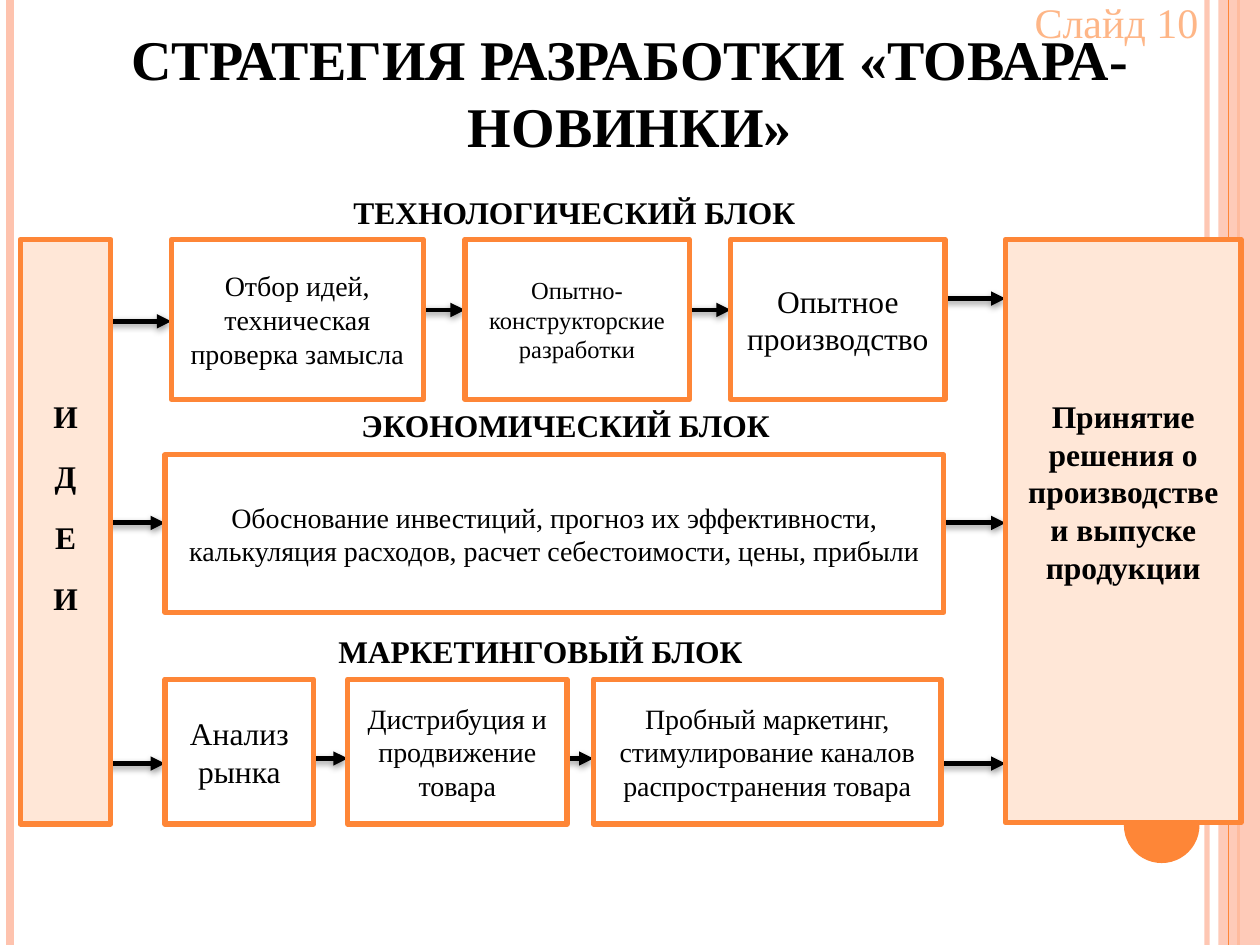
from typing import NamedTuple

from lxml import etree
from pptx import Presentation
from pptx import util as u
from pptx.dml.color import RGBColor
from pptx.enum import shapes, text
from pptx.oxml.ns import qn

FONT = "Times New Roman"
COLORS = {"orange": "FE8637", "pink": "FEC3AE", "cream": "FFE7D7",
          "peach": "FEB687", "white": "FFFFFF", "black": "000000"}


class Label(NamedTuple):
    left: float
    top: float
    width: float
    height: float
    words: str
    size: int = 18
    color: str = "black"
    bold: bool = True
    align: text.PP_ALIGN = text.PP_ALIGN.CENTER
    anchor: text.MSO_ANCHOR = text.MSO_ANCHOR.TOP


class Step(NamedTuple):
    left: float
    width: float
    words: str
    size: int


class Row(NamedTuple):
    top: float
    height: float
    steps: list[Step]


class Rail(NamedTuple):
    x: float
    color: str
    weight: float
    opacity: int = 100


class Arrow(NamedTuple):
    tip: float
    y: float


RAILS = [Rail(9.58, "pink", 3, 93), Rail(0.08, "pink", 4.5), Rail(9.83, "orange", 1.5)]
EDGE_RAIL = Rail(9.75, "orange", 0.75)
ARROW_LENGTH = 0.64
ARROWS = [Arrow(7.98, 6.06), Arrow(4.71, 6.02), Arrow(2.76, 6.02), Arrow(1.31, 6.06),
          Arrow(7.98, 4.15), Arrow(1.31, 4.15),
          Arrow(7.98, 2.37), Arrow(5.8, 2.46), Arrow(3.69, 2.46), Arrow(1.36, 2.55)]
ROWS = [
    Row(1.9, 1.27, [Step(1.36, 2, "Отбор идей, техническая проверка замысла", 16),
                    Step(3.69, 1.78, "Опытно-конструкторские разработки", 14),
                    Step(5.8, 1.7, "Опытное производство", 18)]),
    Row(5.39, 1.15, [Step(1.31, 1.18, "Анализ рынка", 18),
                     Step(2.76, 1.74, "Дистрибуция и продвижение товара", 16),
                     Step(4.71, 2.76, "Пробный маркетинг, стимулирование каналов "
                                      "распространения товара", 16)]),
    Row(3.61, 1.25, [Step(1.31, 6.18, "Обоснование инвестиций, прогноз их эффективности, "
                                      "калькуляция расходов, расчет себестоимости, цены, "
                                      "прибыли", 16)]),
]
PAGE_LABELS = [
    Label(0, 0.61, 10, 0.7, "СТРАТЕГИЯ РАЗРАБОТКИ «ТОВАРА-НОВИНКИ»", 32,
          anchor=text.MSO_ANCHOR.BOTTOM),
    Label(7.73, -0.08, 1.88, 0.51, "Слайд 10", 24, "peach", False, text.PP_ALIGN.RIGHT),
]
HEADINGS = [Label(2.48, 1.48, 4.16, 0.6, "ТЕХНОЛОГИЧЕСКИЙ БЛОК"),
            Label(2.57, 3.17, 3.84, 0.6, "ЭКОНОМИЧЕСКИЙ БЛОК"),
            Label(2.57, 4.97, 3.44, 0.6, "МАРКЕТИНГОВЫЙ БЛОК")]


def rgb(name: str) -> RGBColor:
    return RGBColor.from_string(COLORS[name])


def set_opacity(fill, percent: int) -> None:
    color = fill._xPr.find(qn("a:solidFill"))[0]
    etree.SubElement(color, qn("a:alpha"), val=str(percent * 1000))


def write(shape, label: Label, gap: float = 0) -> None:
    frame = shape.text_frame
    frame.word_wrap = True
    frame.vertical_anchor = label.anchor
    frame.text = label.words
    for number, para in enumerate(frame.paragraphs):
        para.alignment = label.align
        para.font.name = FONT
        para.font.size = u.Pt(label.size)
        para.font.bold = label.bold
        para.font.color.rgb = rgb(label.color)
        if number:
            para.space_before = u.Pt(gap)


def add_label(page, label: Label) -> None:
    box = page.shapes.add_textbox(*map(u.Inches, label[:4]))
    write(box, label)


def add_block(page, kind, left: float, top: float, width: float, height: float,
              fill: str, outlined: bool = False):
    block = page.shapes.add_shape(kind, *map(u.Inches, (left, top, width, height)))
    block.shadow.inherit = False
    block.fill.solid()
    block.fill.fore_color.rgb = rgb(fill)
    if outlined:
        block.line.color.rgb = rgb("orange")
        block.line.width = u.Pt(3)
    else:
        block.line.fill.background()
    return block


def add_box(page, label: Label, fill: str, gap: float = 0):
    box = add_block(page, shapes.MSO_SHAPE.RECTANGLE, *label[:4], fill, outlined=True)
    write(box, label, gap)
    return box


def add_line(page, start: tuple[float, float], end: tuple[float, float],
             color: str, weight: float):
    line = page.shapes.add_connector(shapes.MSO_CONNECTOR.STRAIGHT,
                                     *map(u.Inches, start + end))
    line.line.color.rgb = rgb(color)
    line.line.width = u.Pt(weight)
    effects = etree.SubElement(line._element.spPr, qn("a:effectLst"))
    return line, effects


def add_rail(page, rail: Rail) -> None:
    line, _ = add_line(page, (rail.x, 0), (rail.x, 7.5), rail.color, rail.weight)
    if rail.opacity < 100:
        set_opacity(line.line.fill, rail.opacity)


def add_arrow(page, arrow: Arrow) -> None:
    line, effects = add_line(page, (arrow.tip - ARROW_LENGTH, arrow.y),
                             (arrow.tip, arrow.y), "black", 2.75)
    etree.SubElement(line.line._get_or_add_ln(), qn("a:tailEnd"), type="triangle")
    shadow = etree.SubElement(effects, qn("a:outerShdw"), blurRad=str(u.Pt(4)),
                              dist=str(u.Pt(1.6)), dir="5400000", rotWithShape="0")
    color = etree.SubElement(shadow, qn("a:srgbClr"), val=COLORS["black"])
    etree.SubElement(color, qn("a:alpha"), val="42000")


def main() -> None:
    deck = Presentation()
    deck.slide_width, deck.slide_height = u.Inches(10), u.Inches(7.5)
    page = deck.slides.add_slide(deck.slide_layouts[6])

    # Side decoration
    for rail in RAILS:
        add_rail(page, rail)
    band = add_block(page, shapes.MSO_SHAPE.RECTANGLE, 9.67, 0, 0.33, 7.5, "pink")
    set_opacity(band.fill, 87)
    add_rail(page, EDGE_RAIL)
    add_block(page, shapes.MSO_SHAPE.OVAL, 8.92, 6.25, 0.6, 0.6, "orange")

    # Title and slide number
    for label in PAGE_LABELS:
        add_label(page, label)

    # Arrows run beneath the boxes they leave
    for arrow in ARROWS:
        add_arrow(page, arrow)

    # Ideas on the left, decision on the right
    ideas = add_box(page, Label(0.16, 1.9, 0.72, 4.64, "\n".join("ИДЕИ")), "cream", gap=13)
    decision = add_box(page, Label(7.98, 1.9, 1.87, 4.63, "Принятие решения о "
                                   "производстве и выпуске продукции"), "cream")
    for box in (ideas, decision):
        box.text_frame.margin_top = u.Inches(1.25)

    # Block headings and the steps of each block
    for heading in HEADINGS:
        add_label(page, heading)
    for row in ROWS:
        for step in row.steps:
            add_box(page, Label(step.left, row.top, step.width, row.height, step.words,
                                step.size, bold=False, anchor=text.MSO_ANCHOR.MIDDLE),
                    "white")

    deck.save("out.pptx")


if __name__ == "__main__":
    main()
